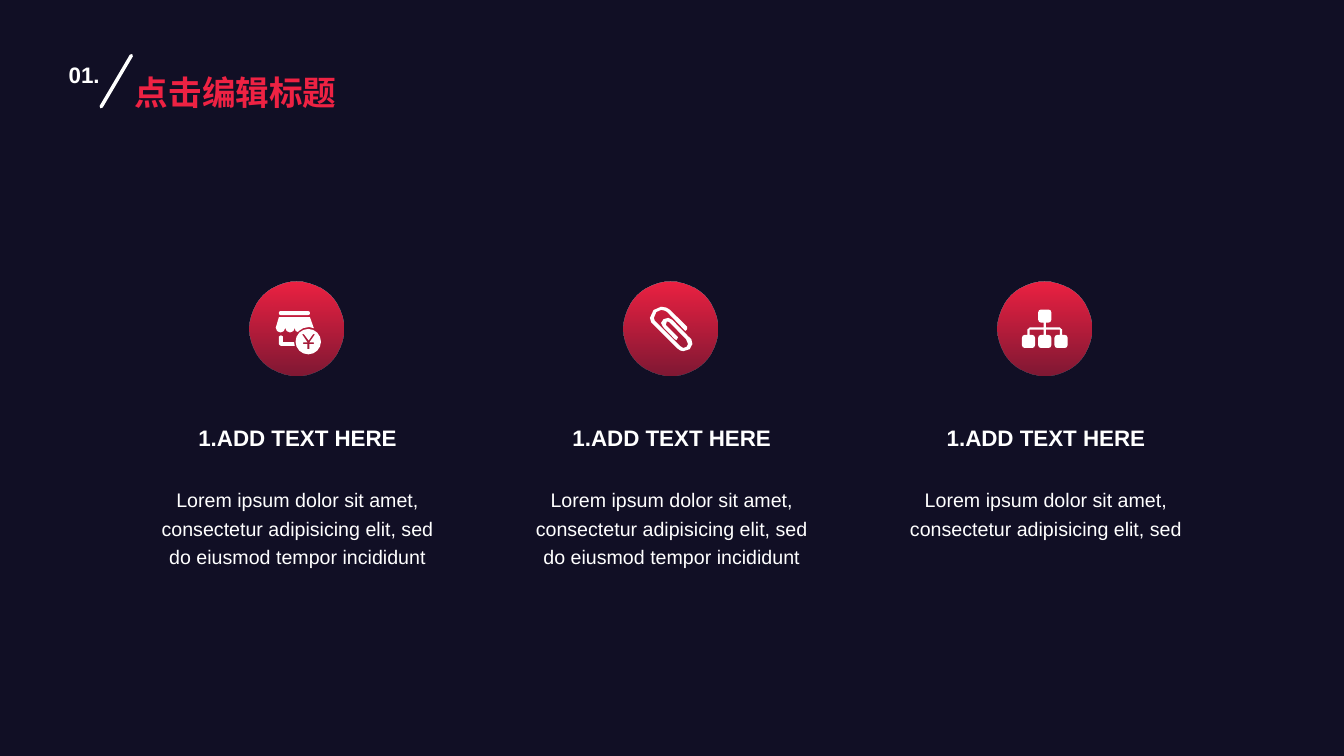
import math
from dataclasses import dataclass

import pptx
import pptx.dml.color
import pptx.enum.shapes
import pptx.enum.text
import pptx.oxml
import pptx.oxml.ns
import pptx.util

Cm = pptx.util.Cm
Pt = pptx.util.Pt
qn = pptx.oxml.ns.qn
Align = pptx.enum.text.PP_ALIGN


@dataclass(frozen=True)
class Theme:
    night: str = "110F25"
    red: str = "EE2243"
    white: str = "FFFFFF"
    font: str = "Arial"
    title: int = 24
    heading: int = 16
    body: int = 14


THEME = Theme()
LOREM = "Lorem ipsum dolor sit amet, consectetur adipisicing elit, sed"
LOREM_LONG = LOREM + " do eiusmod tempor incididunt"
HEADING = "1.ADD TEXT HERE"

# Column layout, in cm
FIRST_CENTER, PITCH = 7.47, 9.43
DISC_MIDDLE, DISC_SIZE = 8.28, 2.37


def rgb(value):
    return pptx.dml.color.RGBColor.from_string(value)


def apply(target, values):
    for name, value in values.items():
        setattr(target, name, value)


# Outlines: lists of points, in cm from the centre of the disc
def arc(x, y, radius, start, end, steps):
    angles = [math.radians(start + (end - start) * i / steps) for i in range(steps + 1)]
    return [(x + radius * math.cos(a), y + radius * math.sin(a)) for a in angles]


def rounded(left, top, width, height, radius):
    right, bottom = left + width - radius, top + height - radius
    left, top = left + radius, top + radius
    corners = [(right, bottom), (left, bottom), (left, top), (right, top)]
    return [point for i, (x, y) in enumerate(corners)
            for point in arc(x, y, radius, 90 * i, 90 * i + 90, 2)]


def smooth(steps):
    """Turn points and six-number cubic curves into a list of points."""
    points = []
    for step in steps:
        if len(step) == 6:
            x0, y0 = points[-1]
            x1, y1, x2, y2, x3, y3 = step
            points.append(((x0 + 3 * x1 + 3 * x2 + x3) / 8,
                           (y0 + 3 * y1 + 3 * y2 + y3) / 8))
        points.append(step[-2:])
    return points


def shop_outlines():
    roof = rounded(-0.44, -0.44, 0.78, 0.1, 0.04)
    awning = [(-0.44, -0.29), (0.34, -0.29), (0.44, -0.01), (0.32, -0.04),
              (0.17, -0.01), (0.06, 0.06), (0.04, 0.09), (-0.02, 0.06)]
    awning += arc(-0.16, -0.02, 0.12, 0, 180, 4) + arc(-0.4, -0.02, 0.12, 0, 180, 4)
    wall = [(-0.44, 0.2), (-0.39, 0.17), (-0.34, 0.2), (-0.34, 0.34), (-0.06, 0.34),
            (-0.04, 0.44), (-0.39, 0.44), (-0.44, 0.4)]
    coin = arc(0.3, 0.33, 0.32, 0, 337.5, 15)
    yen = [(0.44, 0.35), (0.44, 0.39), (0.33, 0.39), (0.33, 0.52), (0.28, 0.52),
           (0.28, 0.39), (0.17, 0.39), (0.17, 0.35), (0.28, 0.35), (0.14, 0.14),
           (0.19, 0.14), (0.31, 0.3), (0.42, 0.14), (0.47, 0.14), (0.33, 0.35)]
    return [roof, awning, wall, coin, yen]


def clip_outlines():
    return [smooth([
        (0.32, 0.57), (0.27, 0.57, 0.22, 0.55, 0.17, 0.5), (-0.42, -0.09),
        (-0.47, -0.11, -0.52, -0.19, -0.52, -0.27),
        (-0.52, -0.42, -0.37, -0.55, -0.24, -0.55),
        (-0.14, -0.55, -0.06, -0.52, -0.01, -0.47), (0.42, -0.04),
        (0.44, 0.0, 0.4, 0.06, 0.37, 0.06), (-0.09, -0.42),
        (-0.11, -0.44, -0.19, -0.47, -0.24, -0.47),
        (-0.32, -0.47, -0.42, -0.39, -0.42, -0.27),
        (-0.42, -0.22, -0.39, -0.17, -0.34, -0.14), (0.24, 0.44),
        (0.32, 0.49), (0.39, 0.49, 0.44, 0.44, 0.44, 0.39),
        (0.39, 0.27), (-0.04, -0.17),
        (-0.06, -0.21, -0.14, -0.17, -0.12, -0.09), (0.19, 0.22),
        (0.15, 0.29), (0.11, 0.27), (-0.19, -0.04), (-0.24, -0.14),
        (-0.24, -0.22, -0.14, -0.27, -0.06, -0.27), (0.04, -0.22), (0.44, 0.19),
        (0.52, 0.24, 0.55, 0.29, 0.55, 0.39), (0.55, 0.5, 0.44, 0.57, 0.32, 0.57)])]


def tree_outlines():
    size, corner = 0.33, 0.07
    nodes = [(0, -0.48), (-0.41, 0.16), (0, 0.16), (0.41, 0.16)]
    boxes = [rounded(x - size / 2, y, size, size, corner) for x, y in nodes]
    half = [(0.03, -0.15), (0.03, -0.03), (0.38, -0.03), (0.44, 0.03), (0.44, 0.16),
            (0.38, 0.16), (0.38, 0.03), (0.03, 0.03), (0.03, 0.16)]
    return boxes + [half + [(-x, y) for x, y in reversed(half)]]


# Elements
def add_text(page, text, place, size, color=THEME.white, bold=False, **layout):
    box = page.shapes.add_textbox(*map(Cm, place))
    apply(box.text_frame, {"word_wrap": True,
                           "auto_size": pptx.enum.text.MSO_AUTO_SIZE.SHAPE_TO_FIT_TEXT})
    para = box.text_frame.paragraphs[0]
    apply(para, layout)
    span = para.add_run()
    span.text = text
    apply(span.font, {"name": THEME.font, "size": Pt(size), "bold": bold})
    span.font.color.rgb = rgb(color)


def add_disc(group, center):
    place = (center - DISC_SIZE / 2, DISC_MIDDLE - DISC_SIZE / 2, DISC_SIZE, DISC_SIZE)
    disc = group.shapes.add_shape(pptx.enum.shapes.MSO_SHAPE.OVAL, *map(Cm, place))
    disc.shadow.inherit = False
    disc.line.fill.background()
    disc.fill.gradient()
    disc.fill.gradient_angle = 270
    for stop in disc.fill.gradient_stops:
        stop.color.rgb = rgb(THEME.red)
    # The lower stop is half transparent
    last_color = disc.element.spPr.findall(".//" + qn("a:srgbClr"))[-1]
    last_color.append(pptx.oxml.parse_xml(
        f'<a:alpha {pptx.oxml.ns.nsdecls("a")} val="50000"/>'))


def add_icon(group, center, outlines):
    placed = [[(Cm(center + x), Cm(DISC_MIDDLE + y)) for x, y in outline]
              for outline in outlines]
    builder = group.shapes.build_freeform(*placed[0][0])
    for number, outline in enumerate(placed):
        if number:
            builder.move_to(*outline[0])
        builder.add_line_segments(outline[1:], close=True)
    icon = builder.convert_to_shape()
    icon.shadow.inherit = False
    icon.fill.solid()
    icon.fill.fore_color.rgb = rgb(THEME.white)
    icon.line.fill.background()


def add_slash(page):
    ends = map(Cm, (2.55, 2.69, 3.31, 1.4))
    slash = page.shapes.add_connector(pptx.enum.shapes.MSO_CONNECTOR.STRAIGHT, *ends)
    slash.line.color.rgb = rgb(THEME.white)
    slash.line.width = Pt(2.5)
    properties = slash.element.spPr
    properties.find(qn("a:ln")).set("cap", "rnd")
    properties.append(pptx.oxml.parse_xml(
        f'<a:effectLst {pptx.oxml.ns.nsdecls("a")}/>'))


def add_column(page, center, outlines, body, body_height):
    group = page.shapes.add_group_shape()
    add_disc(group, center)
    add_icon(group, center, outlines)
    middle = center + 0.03
    add_text(page, HEADING, (middle - 3.19, 10.57, 6.38, 0.94), THEME.heading,
             bold=True, alignment=Align.CENTER)
    add_text(page, body, (middle - 3.82, 12.06, 7.64, body_height), THEME.body,
             alignment=Align.CENTER, line_spacing=1.2)


def main():
    deck = pptx.Presentation()
    apply(deck, {"slide_width": Cm(33.87), "slide_height": Cm(19.05)})
    page = deck.slides.add_slide(deck.slide_layouts[6])
    page.background.fill.solid()
    page.background.fill.fore_color.rgb = rgb(THEME.night)

    # Three columns
    columns = [(shop_outlines(), LOREM_LONG, 2.41),
               (clip_outlines(), LOREM_LONG, 2.41),
               (tree_outlines(), LOREM, 1.63)]
    for number, column in enumerate(columns):
        add_column(page, FIRST_CENTER + number * PITCH, *column)

    # Title
    add_text(page, "点击编辑标题", (3.15, 1.48, 6.17, 1.37), THEME.title, THEME.red,
             bold=True, line_spacing=1.2)
    add_text(page, "01.", (1.48, 1.42, 1.57, 0.94), THEME.heading, bold=True)
    add_slash(page)

    deck.save("out.pptx")


if __name__ == "__main__":
    main()
